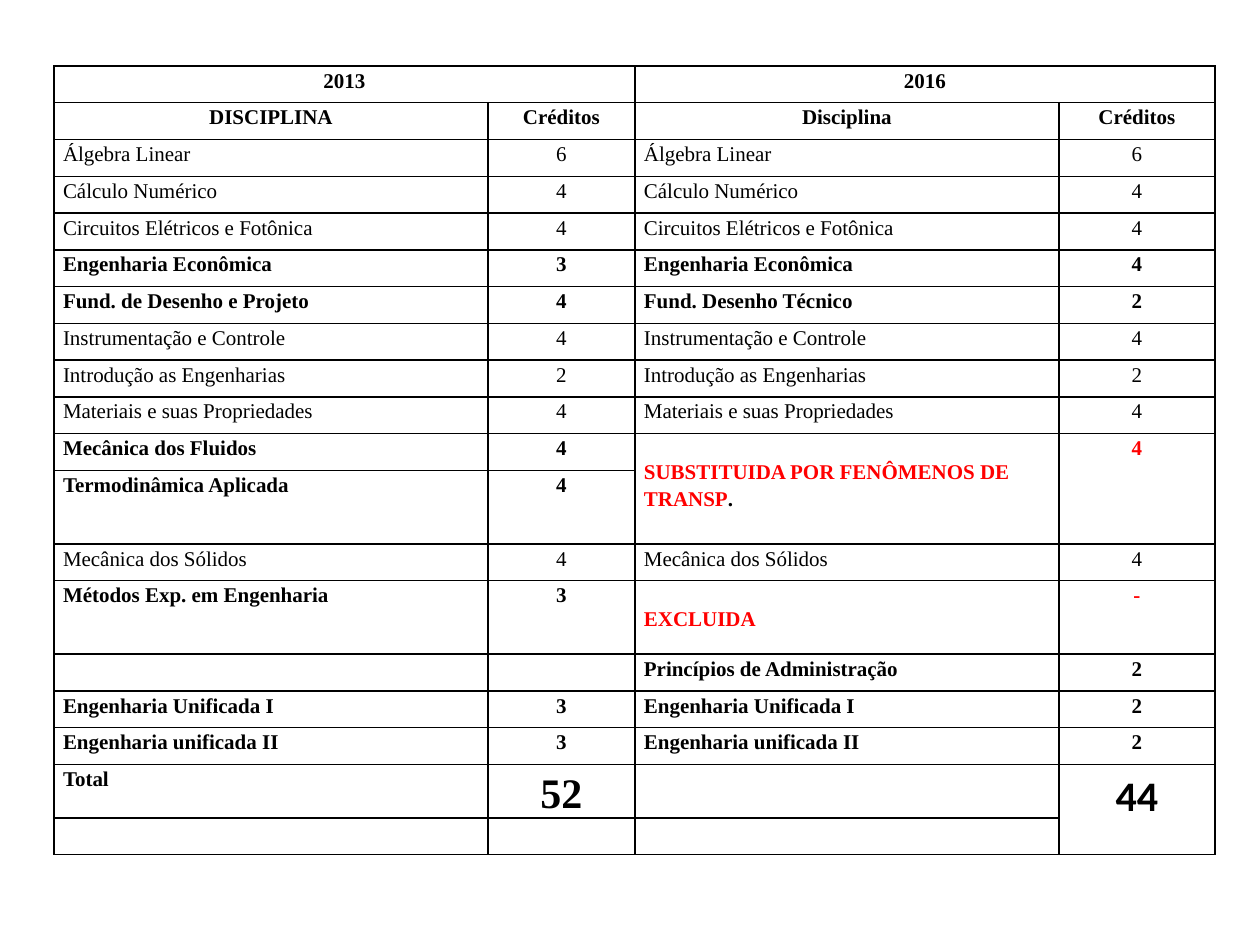
from dataclasses import dataclass

import pptx
import pptx.dml.color
import pptx.enum.text
import pptx.oxml.ns
import pptx.util
from lxml import etree

PX = 914400 // 126
COLORS = {"black": "000000", "red": "FF0000"}
FONT = "Times New Roman"
LEFT, TOP = 54, 66
COLUMNS = (434, 147, 424, 156)
GRID_HEIGHT = 772
LINE_OFFSET = 24


@dataclass(frozen=True)
class Entry:
    text: str = ""
    color: str = "black"
    size: int = 12
    font: str = FONT
    tail: str = ""
    top: int = 0


@dataclass(frozen=True)
class Row:
    cells: tuple[str | Entry, ...]
    bold: bool = True
    units: int = 1


def same(name: str, credits: str) -> Row:
    """A subject that did not change between the two curricula."""
    return Row((name, credits, name, credits), bold=False)


ROWS = (
    Row(("2013", "", "2016", "")),
    Row(("DISCIPLINA", "Créditos", "Disciplina", "Créditos")),
    same("Álgebra Linear", "6"),
    same("Cálculo Numérico", "4"),
    same("Circuitos Elétricos e Fotônica", "4"),
    Row(("Engenharia Econômica", "3", "Engenharia Econômica", "4")),
    Row(("Fund. de Desenho e Projeto", "4", "Fund. Desenho Técnico", "2")),
    same("Instrumentação e Controle", "4"),
    same("Introdução as Engenharias", "2"),
    same("Materiais e suas Propriedades", "4"),
    Row(("Mecânica dos Fluidos", "4",
         Entry("SUBSTITUIDA POR FENÔMENOS DE TRANSP", "red", tail=".", top=LINE_OFFSET),
         Entry("4", "red"))),
    Row(("Termodinâmica Aplicada", "4", "", ""), units=2),
    same("Mecânica dos Sólidos", "4"),
    Row(("Métodos Exp. em Engenharia", "3",
         Entry("EXCLUIDA", "red", top=LINE_OFFSET), Entry("-", "red")), units=2),
    Row(("", "", "Princípios de Administração", "2")),
    Row(("Engenharia Unificada I", "3", "Engenharia Unificada I", "2")),
    Row(("Engenharia unificada II", "3", "Engenharia unificada II", "2")),
    Row(("Total", Entry("52", size=24), "", Entry("44", size=24, font="Calibri"))),
    Row(("", "", "", "")),
)
HEADER_ROWS = 2
# first row, first column, last row, last column
MERGES = ((0, 0, 0, 1), (0, 2, 0, 3), (10, 2, 11, 2), (10, 3, 11, 3), (17, 3, 18, 3))


def draw_borders(cell: pptx.table._Cell) -> None:
    properties = cell._tc.get_or_add_tcPr()
    for index, side in enumerate(("a:lnL", "a:lnR", "a:lnT", "a:lnB")):
        line = etree.Element(pptx.oxml.ns.qn(side), w=str(pptx.util.Pt(1)))
        fill = etree.SubElement(line, pptx.oxml.ns.qn("a:solidFill"))
        etree.SubElement(fill, pptx.oxml.ns.qn("a:srgbClr"), val=COLORS["black"])
        properties.insert(index, line)


def write_cell(cell: pptx.table._Cell, entry: Entry, bold: bool, centred: bool) -> None:
    cell.fill.background()
    draw_borders(cell)
    cell.margin_left = cell.margin_right = 9 * PX
    cell.margin_top, cell.margin_bottom = entry.top * PX, 0
    para = cell.text_frame.paragraphs[0]
    if not entry.text:
        etree.SubElement(para._p, pptx.oxml.ns.qn("a:endParaRPr"), sz="1200")
        return
    para.line_spacing = 1.15
    para.alignment = (pptx.enum.text.PP_ALIGN.CENTER if centred
                      else pptx.enum.text.PP_ALIGN.LEFT)
    for text, color in ((entry.text, entry.color), (entry.tail, "black")):
        if text:
            span = para.add_run()
            span.text = text
            span.font.name = entry.font
            span.font.size = pptx.util.Pt(entry.size)
            span.font.bold = bold
            span.font.color.rgb = pptx.dml.color.RGBColor.from_string(COLORS[color])


def draw_table(page: pptx.slide.Slide) -> None:
    frame = page.shapes.add_table(len(ROWS), len(COLUMNS), LEFT * PX, TOP * PX,
                                  sum(COLUMNS) * PX, GRID_HEIGHT * PX)
    table = frame.table
    table.first_row = table.horz_banding = False
    for column, width in zip(table.columns, COLUMNS):
        column.width = width * PX
    unit = GRID_HEIGHT * PX // sum(row.units for row in ROWS)
    for r, row in enumerate(ROWS):
        table.rows[r].height = row.units * unit
        for c, value in enumerate(row.cells):
            entry = value if isinstance(value, Entry) else Entry(value)
            write_cell(table.cell(r, c), entry, row.bold, r < HEADER_ROWS or c % 2 == 1)
    for top, left, bottom, right in MERGES:
        table.cell(top, left).merge(table.cell(bottom, right))


def main() -> None:
    deck = pptx.Presentation()
    deck.slide_width = pptx.util.Inches(10)
    deck.slide_height = pptx.util.Inches(7.5)
    page = deck.slides.add_slide(deck.slide_layouts[6])
    draw_table(page)
    deck.save("out.pptx")


if __name__ == "__main__":
    main()
